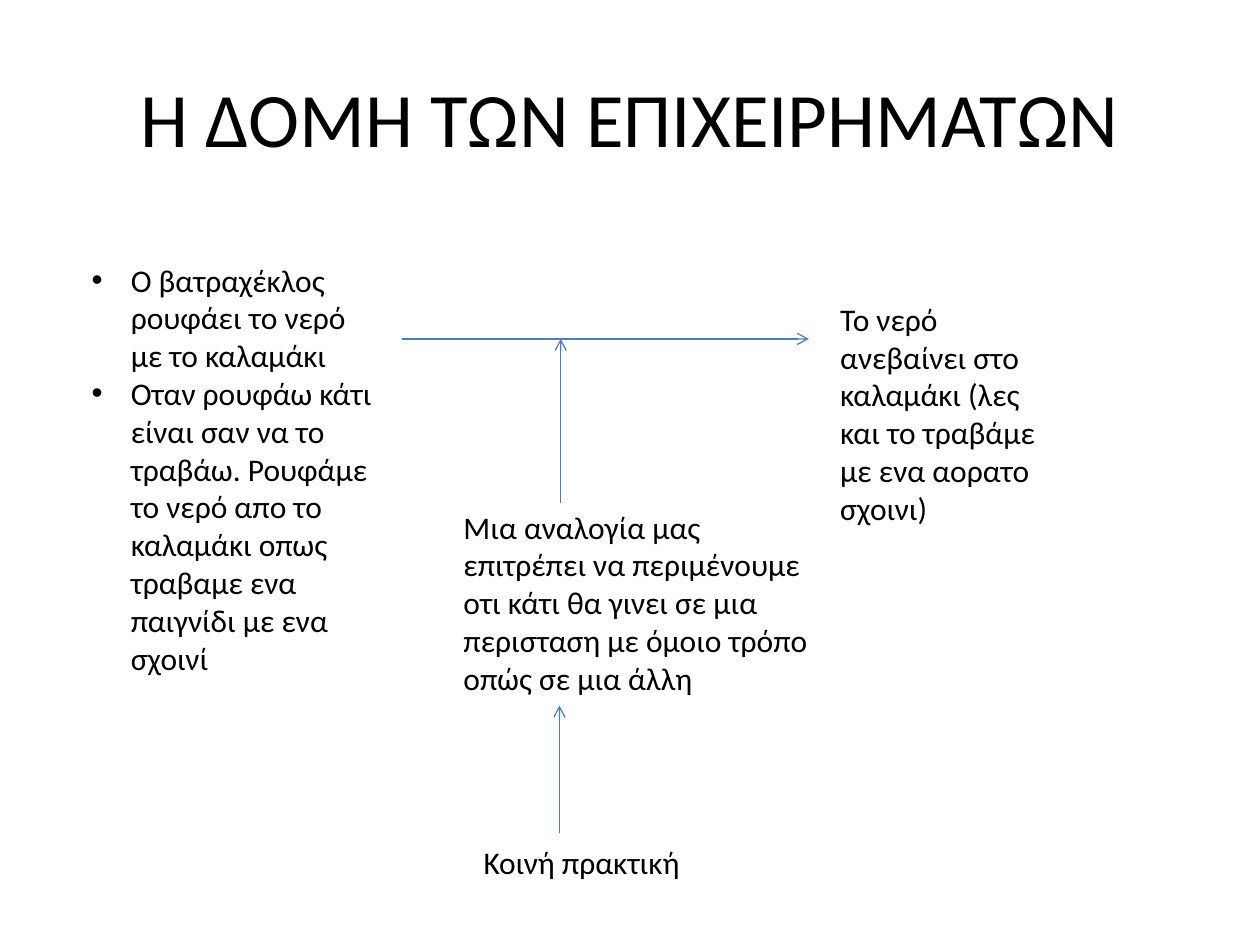
from lxml import etree
from pptx import Presentation
from pptx.dml.color import RGBColor
from pptx.enum.shapes import MSO_CONNECTOR
from pptx.enum.text import MSO_ANCHOR, MSO_AUTO_SIZE, PP_ALIGN
from pptx.oxml.ns import qn
from pptx.util import Inches, Pt

BLACK = RGBColor(0x00, 0x00, 0x00)
BLUE = RGBColor(0x4B, 0x7E, 0xBC)
FONT = "Calibri"
STRAIGHT = MSO_CONNECTOR.STRAIGHT
CENTER = PP_ALIGN.CENTER
MIDDLE = MSO_ANCHOR.MIDDLE
GROW = MSO_AUTO_SIZE.SHAPE_TO_FIT_TEXT
INDENT = Inches(0.31)

# Box in inches, bulleted or not, paragraphs
TEXTS = [
    ((0.63, 2.02, 2.44, 3.43), True, [
        "Ο βατραχέκλος ρουφάει το νερό με το καλαμάκι",
        "Οταν ρουφάω κάτι είναι σαν να το τραβάω. Ρουφάμε το νερό απο το "
        "καλαμάκι οπως τραβαμε ενα παιγνίδι με ενα σχοινί"]),
    ((6.57, 2.33, 1.97, 1.92), False, [
        "Το νερό ανεβαίνει στο καλαμάκι (λες και το τραβάμε με ενα αορατο "
        "σχοινι)"]),
    ((3.58, 3.98, 2.99, 1.62), False, [
        "Μια αναλογία μας επιτρέπει να περιμένουμε οτι κάτι θα γινει σε μια "
        "περισταση με όμοιο τρόπο οπώς σε μια άλλη"]),
    ((3.74, 6.64, 3.98, 0.4), False, ["Κοινή πρακτική"]),
]

# Start x, y and end x, y in inches
ARROWS = [
    (3.19, 2.69, 6.42, 2.69),
    (4.45, 3.99, 4.45, 2.69),
    (4.44, 6.61, 4.44, 5.6),
]


def format_runs(p, size):
    for r in p.runs:
        r.font.name = FONT
        r.font.size = Pt(size)
        r.font.color.rgb = BLACK


def add_bullet(p):
    pPr = p._p.get_or_add_pPr()
    pPr.set("marL", str(INDENT))
    pPr.set("indent", str(-INDENT))
    etree.SubElement(pPr, qn("a:buFont")).set("typeface", "Arial")
    etree.SubElement(pPr, qn("a:buChar")).set("char", "•")


prs = Presentation()
prs.slide_width = Inches(10)
prs.slide_height = Inches(7.5)
s = prs.slides.add_slide(prs.slide_layouts[5])

title = s.shapes.title
title.left, title.top = Inches(0.5), Inches(0.3)
title.width, title.height = Inches(9), Inches(1.25)
tf = title.text_frame
tf.text = "Η ΔΟΜΗ ΤΩΝ ΕΠΙΧΕΙΡΗΜΑΤΩΝ"
tf.vertical_anchor = MIDDLE
tf.paragraphs[0].alignment = CENTER
format_runs(tf.paragraphs[0], 44)

for box, bulleted, lines in TEXTS:
    tf = s.shapes.add_textbox(*map(Inches, box)).text_frame
    tf.word_wrap = True
    tf.auto_size = GROW
    tf.text = "\n".join(lines)
    for p in tf.paragraphs:
        if bulleted:
            add_bullet(p)
        format_runs(p, 18)

for ends in ARROWS:
    arrow = s.shapes.add_connector(STRAIGHT, *map(Inches, ends))
    arrow.line.color.rgb = BLUE
    arrow.line.width = Pt(0.75)
    ln = arrow.line._get_or_add_ln()
    etree.SubElement(ln, qn("a:tailEnd")).set("type", "arrow")
    etree.SubElement(arrow._element.spPr, qn("a:effectLst"))

prs.save("out.pptx")
